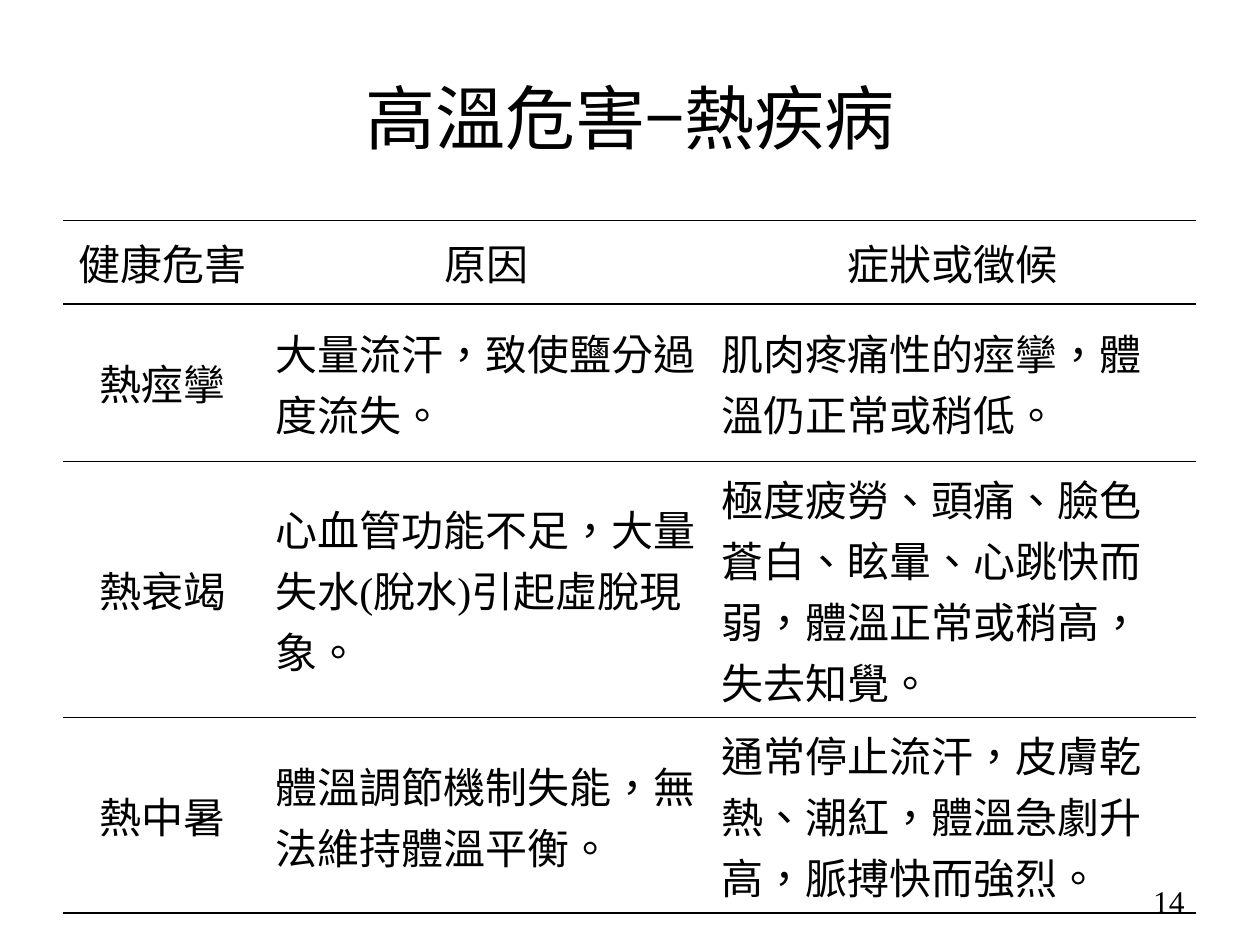
from dataclasses import dataclass

from lxml import etree
from pptx import Presentation
from pptx.dml.color import RGBColor
from pptx.enum import lang, text
from pptx.oxml import ns
from pptx.util import Cm, Pt


@dataclass(frozen=True)
class Theme:
    ink: str = "000000"
    font: str = "Times New Roman"
    title: int = 40
    body: int = 24
    page: int = 18
    rule: int = 1


@dataclass(frozen=True)
class Box:
    left: float
    top: float
    width: float
    height: float

    def place(self) -> tuple:
        return tuple(Cm(n) for n in (self.left, self.top, self.width, self.height))


@dataclass(frozen=True)
class Row:
    height: float
    cells: tuple[str, str, str]


THEME = Theme()
LEFT, MID, RIGHT = text.PP_ALIGN.LEFT, text.PP_ALIGN.CENTER, text.PP_ALIGN.RIGHT
TITLE = Box(1.27, 0.76, 22.86, 3.18)
GRID = Box(1.27, 4.45, 22.83, 13.95)
PAGE = Box(18.21, 17.65, 5.92, 1.02)
COLS = (4.03, 9.0, 9.8)
ROWS = (
    Row(1.68, ("健康危害", "原因", "症狀或徵候")),
    Row(3.17, ("熱痙攣", "大量流汗，致使鹽分過度流失。",
               "肌肉疼痛性的痙攣，體溫仍正常或稍低。")),
    Row(3.17, ("熱衰竭", "心血管功能不足，大量失水(脫水)引起虛脫現象。",
               "極度疲勞、頭痛、臉色蒼白、眩暈、心跳快而弱，體溫正常或稍高，失去知覺。")),
    Row(3.17, ("熱中暑", "體溫調節機制失能，無法維持體溫平衡。",
               "通常停止流汗，皮膚乾熱、潮紅，體溫急劇升高，脈搏快而強烈。")),
)


def write(frame, words: str, size: int, align) -> None:
    para = frame.paragraphs[0]
    para.alignment = align
    run = para.add_run()
    run.text = words
    font = run.font
    font.name, font.size, font.bold = THEME.font, Pt(size), False
    font.color.rgb = RGBColor.from_string(THEME.ink)
    font.language_id = lang.MSO_LANGUAGE_ID.TRADITIONAL_CHINESE


def rule(cell) -> None:
    """Draw the top and bottom borders and clear the side ones."""
    props = cell._tc.get_or_add_tcPr()
    for spot, side in enumerate("LRTB"):
        line = etree.Element(ns.qn(f"a:ln{side}"), w=str(Pt(THEME.rule)))
        if side in "TB":
            fill = etree.SubElement(line, ns.qn("a:solidFill"))
            etree.SubElement(fill, ns.qn("a:srgbClr"), val=THEME.ink)
        else:
            etree.SubElement(line, ns.qn("a:noFill"))
        props.insert(spot, line)


def add_grid(slide) -> None:
    table = slide.shapes.add_table(len(ROWS), len(COLS), *GRID.place()).table
    table.first_row = table.horz_banding = False
    for col, width in zip(table.columns, COLS):
        col.width = Cm(width)
    for r, row in enumerate(ROWS):
        table.rows[r].height = Cm(row.height)
        for c, words in enumerate(row.cells):
            cell = table.cell(r, c)
            cell.vertical_anchor = text.MSO_ANCHOR.MIDDLE
            cell.fill.background()
            rule(cell)
            write(cell.text_frame, words, THEME.body, LEFT if r and c else MID)


def add_title(slide) -> None:
    title = slide.shapes.title
    title.left, title.top, title.width, title.height = TITLE.place()
    title.text_frame.vertical_anchor = text.MSO_ANCHOR.MIDDLE
    write(title.text_frame, "高溫危害−熱疾病", THEME.title, MID)


def add_page(slide) -> None:
    frame = slide.shapes.add_textbox(*PAGE.place()).text_frame
    frame.word_wrap = True
    frame.vertical_anchor = text.MSO_ANCHOR.MIDDLE
    write(frame, "14", THEME.page, RIGHT)


def main() -> None:
    deck = Presentation()
    deck.slide_width, deck.slide_height = Cm(25.4), Cm(19.05)
    slide = deck.slides.add_slide(deck.slide_layouts[5])
    add_title(slide)
    add_grid(slide)
    add_page(slide)
    deck.save("out.pptx")


if __name__ == "__main__":
    main()
